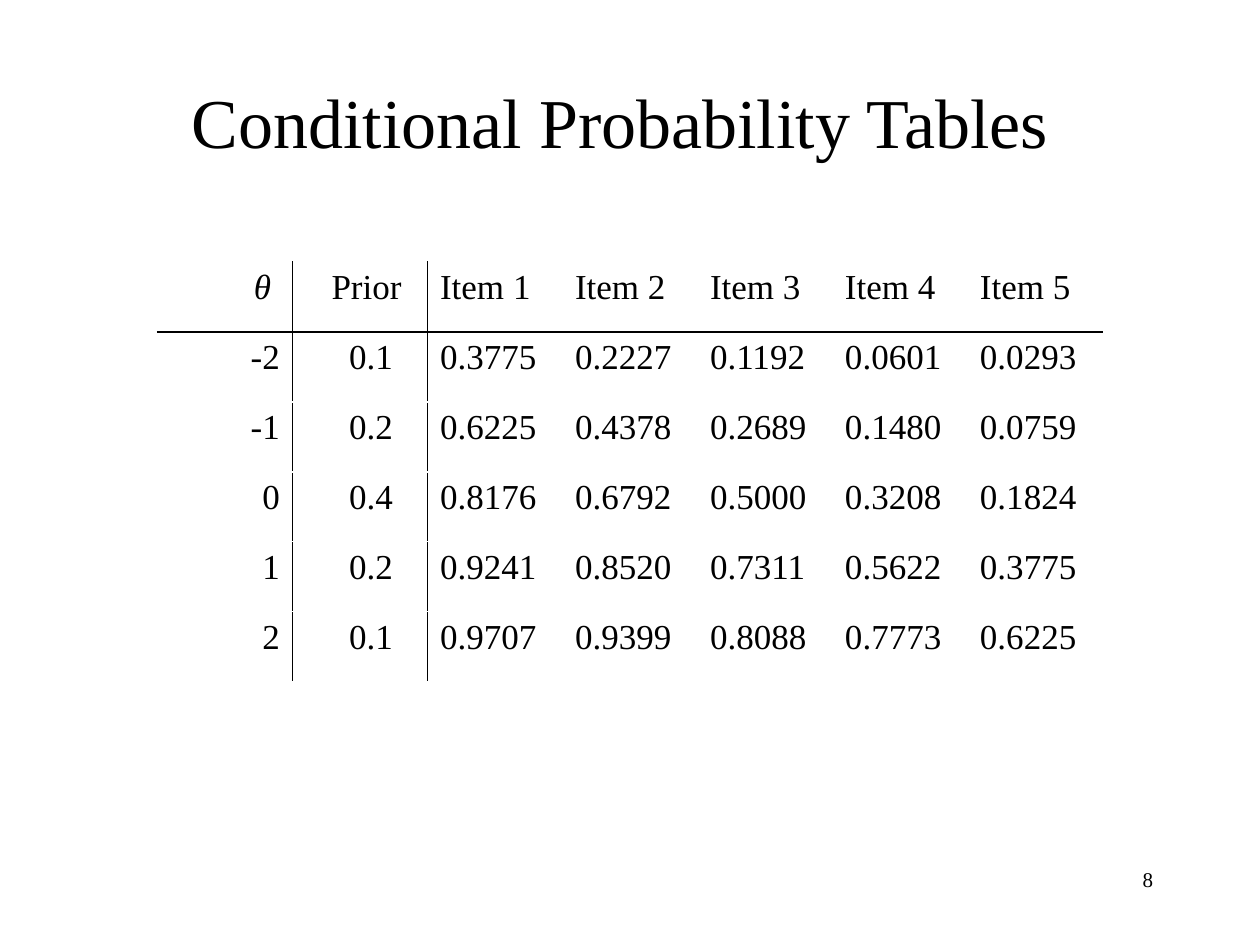
import dataclasses

import pptx
import pptx.dml.color
import pptx.enum.text
import pptx.oxml
import pptx.oxml.ns
import pptx.util

Inches = pptx.util.Inches
Pt = pptx.util.Pt
Align = pptx.enum.text.PP_ALIGN
Anchor = pptx.enum.text.MSO_ANCHOR


@dataclasses.dataclass(frozen=True)
class Theme:
    font: str = "Times New Roman"
    ink: str = "000000"
    title: int = 40
    body: int = 20
    number: int = 12
    rule: int = 1


theme = Theme()


def style(para, size, align):
    para.alignment = align
    para.font.name = theme.font
    para.font.size = Pt(size)
    para.font.bold = False
    para.font.color.rgb = pptx.dml.color.RGBColor.from_string(theme.ink)


def add_border(cell, side):
    cell._tc.get_or_add_tcPr().append(pptx.oxml.parse_xml(
        f'<a:ln{side} {pptx.oxml.ns.nsdecls("a")} w="{Pt(theme.rule)}">'
        f'<a:solidFill><a:srgbClr val="{theme.ink}"/></a:solidFill></a:ln{side}>'
    ))


deck = pptx.Presentation()
deck.slide_width = Inches(10)
deck.slide_height = Inches(7.5)
page = deck.slides.add_slide(deck.slide_layouts[5])

number_box = page.shapes.add_textbox(Inches(7.17), Inches(6.83), Inches(2.08), Inches(0.5))
number_box.text_frame.word_wrap = True
number_box.text_frame.text = "8"
style(number_box.text_frame.paragraphs[0], theme.number, Align.RIGHT)

title = page.shapes.title
title.left, title.top = Inches(0.67), Inches(0.33)
title.width, title.height = Inches(8.5), Inches(1.25)
title.text_frame.text = "Conditional Probability Tables"
title.text_frame.vertical_anchor = Anchor.MIDDLE
style(title.text_frame.paragraphs[0], theme.title, Align.CENTER)

rows = [
    ["θ", "Prior", "Item 1", "Item 2", "Item 3", "Item 4", "Item 5"],
    ["-2", "0.1", "0.3775", "0.2227", "0.1192", "0.0601", "0.0293"],
    ["-1", "0.2", "0.6225", "0.4378", "0.2689", "0.1480", "0.0759"],
    ["0", "0.4", "0.8176", "0.6792", "0.5000", "0.3208", "0.1824"],
    ["1", "0.2", "0.9241", "0.8520", "0.7311", "0.5622", "0.3775"],
    ["2", "0.1", "0.9707", "0.9399", "0.8088", "0.7773", "0.6225"],
]
table = page.shapes.add_table(
    len(rows), len(rows[0]), Inches(1.25), Inches(2.08), Inches(7.5), Inches(3.33)
).table
table.first_row = False
table.horz_banding = False

for row_index, row in enumerate(rows):
    for column_index, text in enumerate(row):
        cell = table.cell(row_index, column_index)
        cell.text = text
        para = cell.text_frame.paragraphs[0]
        style(para, theme.body, Align.RIGHT if column_index == 0 else Align.LEFT)
        if column_index == 1:
            cell.margin_left = Inches(0.31 if row_index == 0 else 0.45)
        borders = {
            "L": column_index in (1, 2),
            "R": column_index in (0, 1),
            "T": row_index == 1,
            "B": row_index == 0,
        }
        for side, shown in borders.items():
            if shown:
                add_border(cell, side)
        cell.fill.background()

theta = table.cell(0, 0)
theta.margin_right = Inches(0.17)
theta.text_frame.paragraphs[0].font.italic = True

deck.save("out.pptx")
